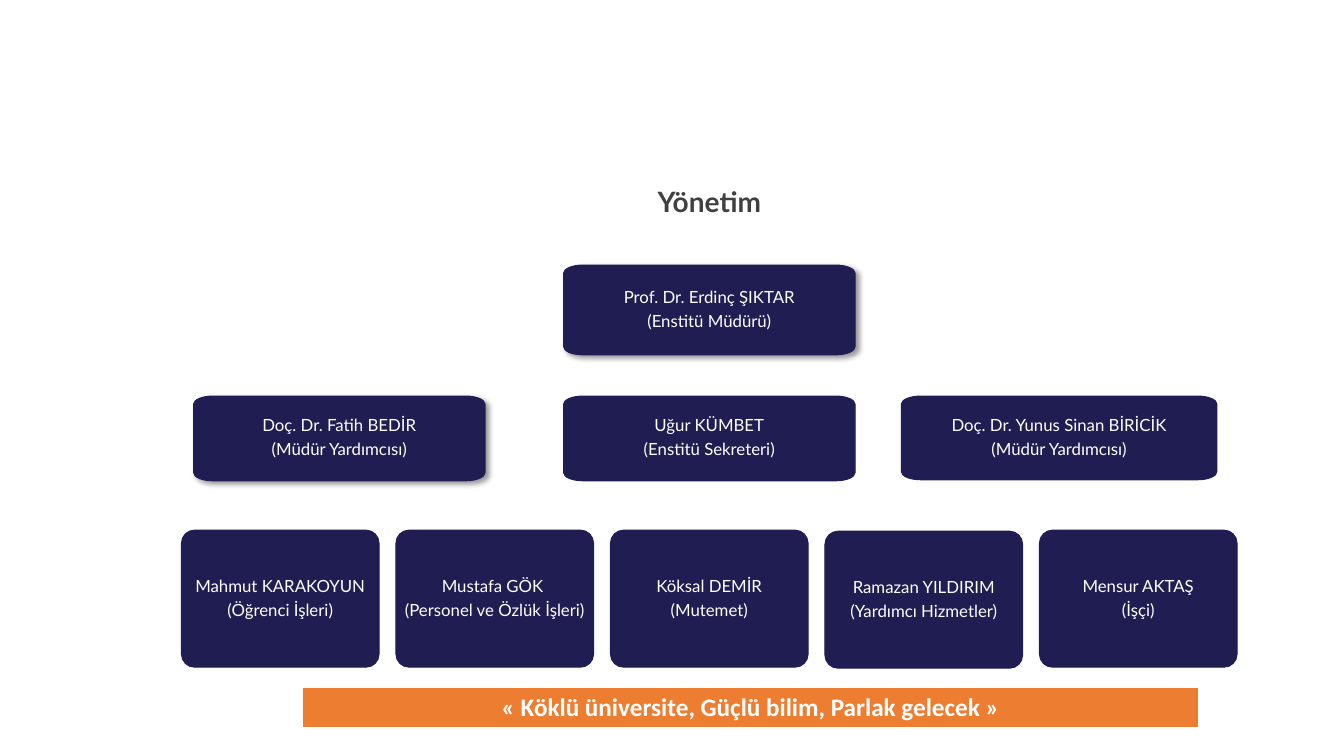
from lxml import etree
from pptx import Presentation
from pptx.dml.color import RGBColor
from pptx.enum import text
from pptx.oxml import ns
from pptx.util import Inches, Pt

COLORS = {"navy": "1F1D52", "orange": "ED7D31", "title": "404041",
          "white": "FFFFFF", "shadow": "000000"}
CURVE = 0.55  # control point distance for a quarter ellipse
WIDE_CORNER = (0.19, 0.08)
ROUND_CORNER = (0.13, 0.13)

# name, role, box, shadow
MANAGERS = [
    ("Prof. Dr. Erdinç ŞIKTAR", "(Enstitü Müdürü)", (5.59, 2.63, 2.89, 0.89), True),
    ("Doç. Dr. Fatih BEDİR", "(Müdür Yardımcısı)", (1.92, 3.93, 2.89, 0.84), True),
    ("Uğur KÜMBET", "(Enstitü Sekreteri)", (5.59, 3.93, 2.89, 0.84), False),
    ("Doç. Dr. Yunus Sinan BİRİCİK", "(Müdür Yardımcısı)", (8.94, 3.93, 3.13, 0.83), False),
]
# name, role, offset downwards
STAFF = [
    ("Mahmut KARAKOYUN", "(Öğrenci İşleri)", 0),
    ("Mustafa GÖK ", "(Personel ve Özlük İşleri)", 0),
    ("Köksal DEMİR", "(Mutemet)", 0),
    ("Ramazan YILDIRIM", "(Yardımcı Hizmetler)", 0.01),
    ("Mensur AKTAŞ", "(İşçi)", 0),
]


def rgb(name):
    return RGBColor.from_string(COLORS[name])


def set_font(p, size, color, name="Lato", bold=False):
    p.alignment = text.PP_ALIGN.CENTER
    p.font.name, p.font.size, p.font.bold = name, Pt(size), bold
    p.font.color.rgb = rgb(color)


def curve_corners(sp):
    """Turn every other edge of the eight-point outline into a quarter ellipse."""
    points = list(sp._element.spPr.iter(ns.qn("a:pt")))
    spots = [(int(pt.get("x")), int(pt.get("y"))) for pt in points]
    for i in range(0, 8, 2):
        (ax, ay), (bx, by) = spots[i], spots[i + 1]
        cx, cy = (ax, by) if i % 4 == 0 else (bx, ay)
        edge = points[i + 1].getparent()
        curve = etree.Element(ns.qn("a:cubicBezTo"))
        for x, y in ((ax + CURVE * (cx - ax), ay + CURVE * (cy - ay)),
                     (bx + CURVE * (cx - bx), by + CURVE * (cy - by)), (bx, by)):
            etree.SubElement(curve, ns.qn("a:pt"), x=str(round(x)), y=str(round(y)))
        edge.getparent().replace(edge, curve)


def add_rounded_box(slide, box, corner):
    x, y, w, h = box
    rx, ry = corner
    right, bottom = x + w, y + h
    start, *rest = [(Inches(px), Inches(py)) for px, py in (
        (x, y + ry), (x + rx, y), (right - rx, y), (right, y + ry),
        (right, bottom - ry), (right - rx, bottom), (x + rx, bottom), (x, bottom - ry))]
    builder = slide.shapes.build_freeform(*start)
    builder.add_line_segments(rest)
    sp = builder.convert_to_shape()
    curve_corners(sp)
    return sp


def add_shadow(sp):
    effects = sp._element.spPr.find(ns.qn("a:effectLst"))
    shadow = etree.SubElement(effects, ns.qn("a:outerShdw"), blurRad=str(Pt(4)),
                              dist=str(Pt(3)), dir="2700000", algn="tl", rotWithShape="0")
    color = etree.SubElement(shadow, ns.qn("a:srgbClr"), val=COLORS["shadow"])
    etree.SubElement(color, ns.qn("a:alpha"), val="40000")


def add_card(slide, box, name, role, corner, shadow=False):
    sp = add_rounded_box(slide, box, corner)
    sp.shadow.inherit = False
    if shadow:
        add_shadow(sp)
    sp.fill.solid()
    sp.fill.fore_color.rgb = rgb("navy")
    sp.line.color.rgb = rgb("navy")
    sp.line.width = Pt(0.75)
    tf = sp.text_frame
    tf.word_wrap = True
    tf.vertical_anchor = text.MSO_ANCHOR.MIDDLE
    tf.margin_left = tf.margin_right = Inches(0.07)
    tf.margin_top = tf.margin_bottom = Inches(0.08)
    for p, line in ((tf.paragraphs[0], name), (tf.add_paragraph(), role)):
        p.text = line
        p.line_spacing = 0.9
        p.space_after = Pt(4.2)
        set_font(p, 12, "white")


def add_title(slide, box):
    title = slide.shapes.title
    title.left, title.top, title.width, title.height = map(Inches, box)
    tf = title.text_frame
    tf.text = "Yönetim"
    tf.vertical_anchor = text.MSO_ANCHOR.MIDDLE
    set_font(tf.paragraphs[0], 20, "title", bold=True)


def add_staff_row(slide, box):
    x, y, w, h = box
    card_w = 1.96
    pitch = (w - card_w) / (len(STAFF) - 1)
    for i, (name, role, drop) in enumerate(STAFF):
        add_card(slide, (x + i * pitch, y + drop, card_w, h), name, role, ROUND_CORNER)


def set_borders(cell):
    props = cell._tc.get_or_add_tcPr()
    for i, (side, width) in enumerate((("lnL", 1), ("lnR", 1), ("lnT", 1), ("lnB", 3))):
        line = etree.Element(ns.qn(f"a:{side}"), w=str(Pt(width)))
        fill = etree.SubElement(line, ns.qn("a:solidFill"))
        etree.SubElement(fill, ns.qn("a:srgbClr"), val=COLORS["white"])
        props.insert(i, line)


def add_motto(slide, box):
    table = slide.shapes.add_table(1, 1, *map(Inches, box)).table
    cell = table.cell(0, 0)
    cell.fill.solid()
    cell.fill.fore_color.rgb = rgb("orange")
    set_borders(cell)
    cell.text = "« Köklü üniversite, Güçlü bilim, Parlak gelecek »"
    set_font(cell.text_frame.paragraphs[0], 18, "white", "Calibri", True)


def main():
    prs = Presentation()
    prs.slide_width, prs.slide_height = Inches(13.33), Inches(7.5)
    slide = prs.slides.add_slide(prs.slide_layouts[5])
    add_title(slide, (1.8, 1.68, 10.47, 0.64))
    for name, role, box, shadow in MANAGERS:
        add_card(slide, box, name, role, WIDE_CORNER, shadow)
    add_staff_row(slide, (1.8, 5.26, 10.47, 1.36))
    add_motto(slide, (3, 6.82, 8.89, 0.41))
    prs.save("out.pptx")


if __name__ == "__main__":
    main()
